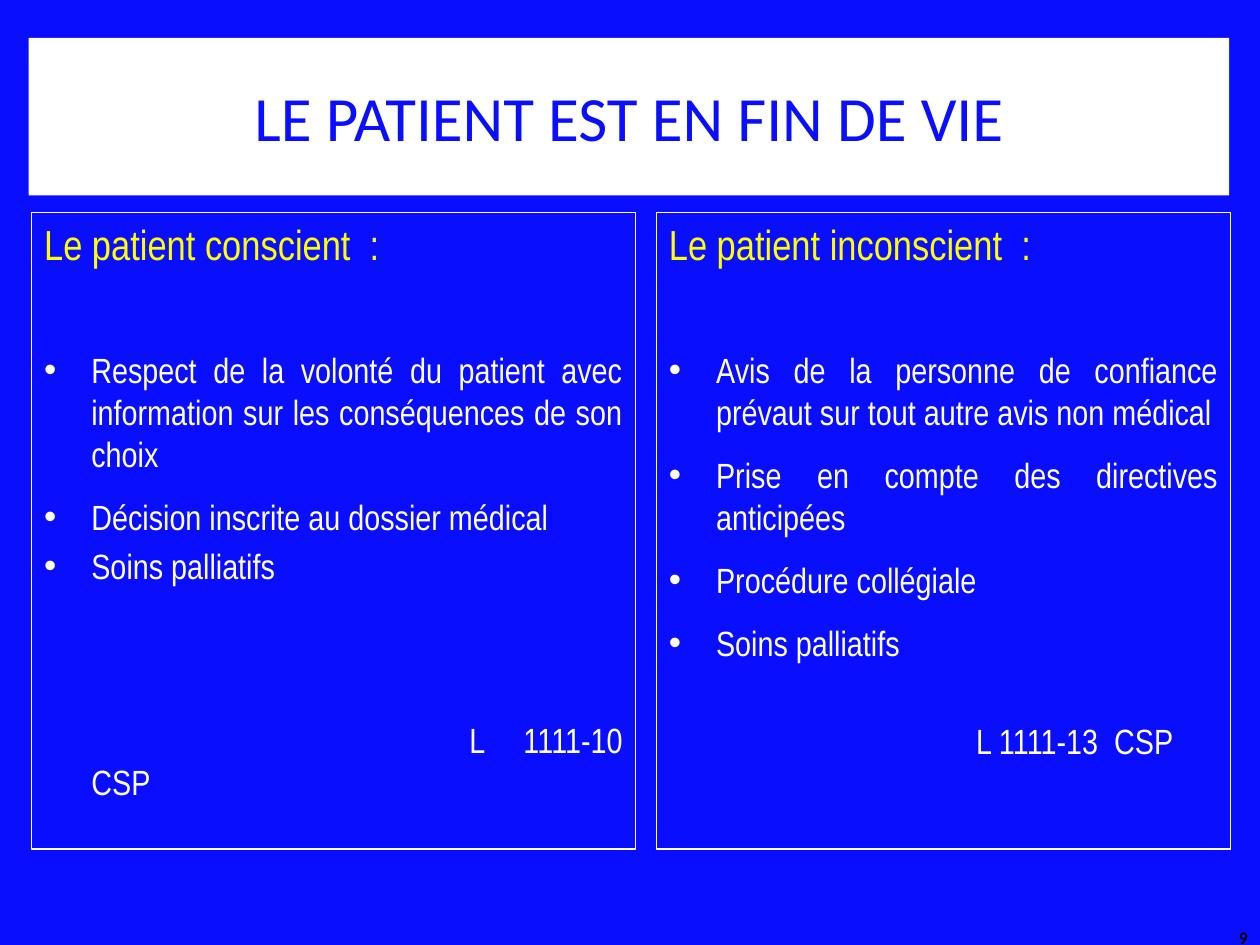
from dataclasses import dataclass

from lxml.etree import SubElement
from pptx import Presentation
from pptx.dml.color import RGBColor
from pptx.enum.text import MSO_ANCHOR, MSO_AUTO_SIZE, PP_ALIGN
from pptx.oxml.ns import qn
from pptx.util import Pt


@dataclass(frozen=True)
class Theme:
    blue: RGBColor = RGBColor(0x0A, 0x0E, 0xFF)
    white: RGBColor = RGBColor(0xFF, 0xFF, 0xFF)
    yellow: RGBColor = RGBColor(0xFF, 0xFF, 0x00)
    black: RGBColor = RGBColor(0x00, 0x00, 0x00)
    title_font: str = "Calibri"
    body_font: str = "Arial Narrow"
    title_size: float = 36
    heading_size: float = 24
    body_size: float = 20
    number_size: float = 10


@dataclass(frozen=True)
class Item:
    text: str
    space_before: float = 12


@dataclass(frozen=True)
class Citation:
    text: str
    space_before: float
    first_line: float


@dataclass(frozen=True)
class Panel:
    left: float
    width: float
    heading: str
    items: tuple[Item, ...]
    citation: Citation


THEME = Theme()
HANGING = 27
PANEL_TOP = 121.5
PANEL_HEIGHT = 363.6

PANELS = (
    Panel(
        18, 345, "Le patient conscient  :",
        (
            Item("Respect de la volonté du patient avec information sur les "
                 "conséquences de son choix", 45),
            Item("Décision inscrite au dossier médical"),
            Item("Soins palliatifs", 4),
        ),
        Citation("L 1111-10 CSP", 75.4, 243),
    ),
    Panel(
        375, 328.2, "Le patient inconscient  :",
        (
            Item("Avis de la personne de confiance prévaut sur tout autre "
                 "avis non médical", 45),
            Item("Prise en compte des directives anticipées"),
            Item("Procédure collégiale"),
            Item("Soins palliatifs"),
        ),
        Citation("L 1111-13  CSP", 32, 175.5),
    ),
)


def place(shape, left: float, top: float, width: float, height: float) -> None:
    shape.left, shape.top = Pt(left), Pt(top)
    shape.width, shape.height = Pt(width), Pt(height)


def style(para, font: str, size: float, color: RGBColor, bold: bool = False) -> None:
    para.font.name = font
    para.font.size = Pt(size)
    para.font.bold = bold
    para.font.color.rgb = color


def write(para, text: str, size: float, color: RGBColor, space_before: float,
          first_line: float = 0, bullet: bool = False,
          align: PP_ALIGN = PP_ALIGN.JUSTIFY) -> None:
    para.text = text
    para.alignment = align
    para.space_before = Pt(space_before)
    properties = para._p.get_or_add_pPr()
    properties.set("marL", str(Pt(HANGING)))
    properties.set("indent", str(Pt(first_line - HANGING)))
    if bullet:
        SubElement(properties, qn("a:buChar")).set("char", "•")
    else:
        SubElement(properties, qn("a:buNone"))
    style(para, THEME.body_font, size, color)


def fill_panel(box, panel: Panel) -> None:
    place(box, panel.left, PANEL_TOP, panel.width, PANEL_HEIGHT)
    box.line.color.rgb = THEME.white
    box.line.width = Pt(0.75)
    frame = box.text_frame
    frame.auto_size = MSO_AUTO_SIZE.NONE
    write(frame.paragraphs[0], panel.heading, THEME.heading_size, THEME.yellow, 4.8,
          align=PP_ALIGN.LEFT)
    for item in panel.items:
        write(frame.add_paragraph(), item.text, THEME.body_size, THEME.white,
              item.space_before, bullet=True)
    citation = panel.citation
    write(frame.add_paragraph(), citation.text, THEME.body_size, THEME.white,
          citation.space_before, citation.first_line)


def fill_title(title, text: str) -> None:
    place(title, 16.4, 21.6, 686, 90)
    title.fill.solid()
    title.fill.fore_color.rgb = THEME.white
    frame = title.text_frame
    frame.auto_size = MSO_AUTO_SIZE.NONE
    frame.vertical_anchor = MSO_ANCHOR.MIDDLE
    para = frame.paragraphs[0]
    para.text = text
    para.alignment = PP_ALIGN.CENTER
    style(para, THEME.title_font, THEME.title_size, THEME.blue)


def add_page_number(page, number: str) -> None:
    box = page.shapes.add_textbox(Pt(552), Pt(526.3), Pt(168), Pt(10.8))
    box.text_frame.word_wrap = True
    para = box.text_frame.paragraphs[0]
    para.text = number
    para.alignment = PP_ALIGN.RIGHT
    style(para, THEME.title_font, THEME.number_size, THEME.black, bold=True)


def main() -> None:
    deck = Presentation()
    deck.slide_width, deck.slide_height = Pt(720), Pt(540)
    page = deck.slides.add_slide(deck.slide_layouts.get_by_name("Two Content"))
    page.background.fill.solid()
    page.background.fill.fore_color.rgb = THEME.blue
    title, *boxes = page.placeholders
    fill_title(title, "LE PATIENT EST EN FIN DE VIE")
    for box, panel in zip(boxes, PANELS):
        fill_panel(box, panel)
    add_page_number(page, "9")
    deck.save("out.pptx")


if __name__ == "__main__":
    main()
